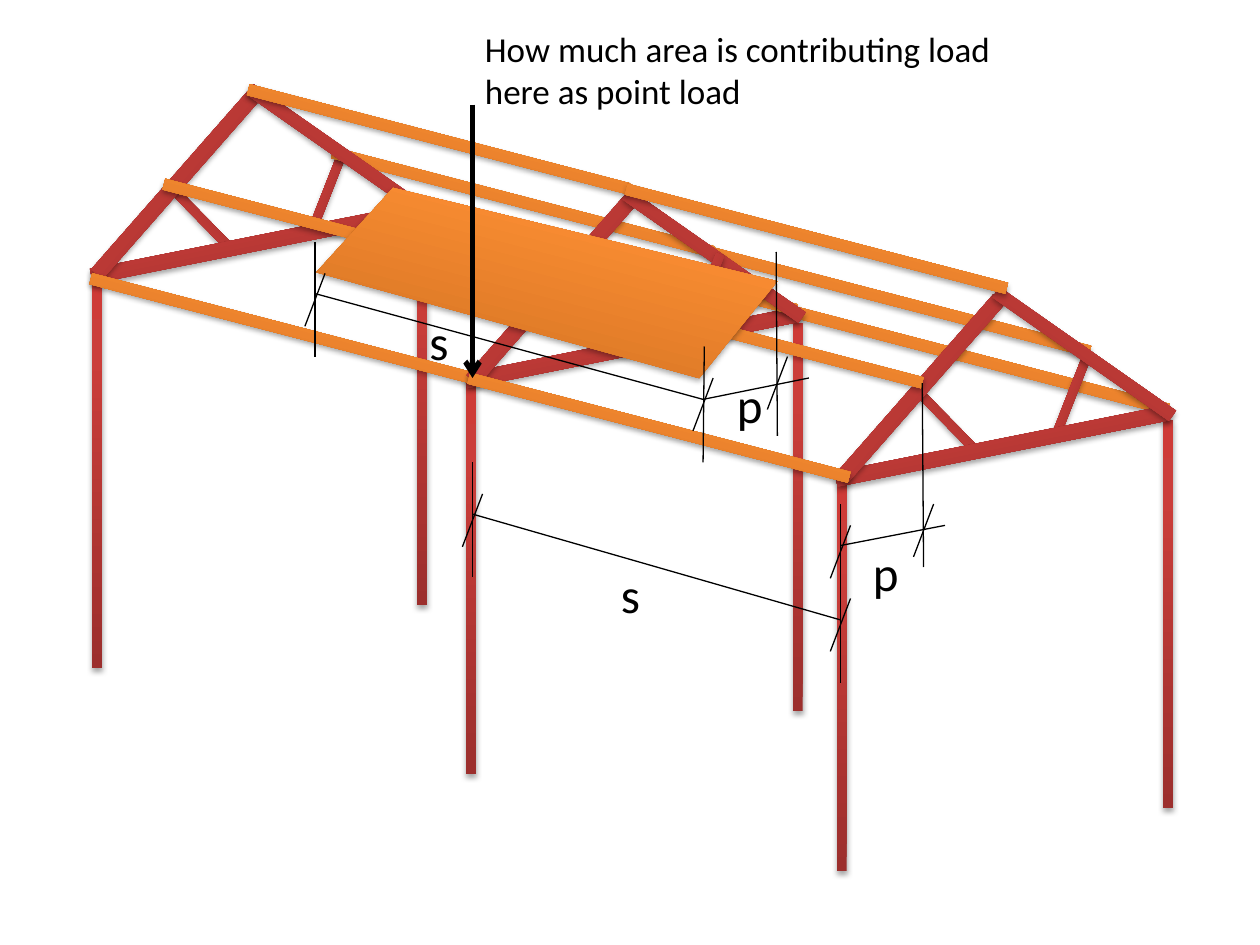
from copy import deepcopy
from math import cos, radians, sin

from pptx import Presentation
from pptx.dml.color import RGBColor
from pptx.enum.shapes import MSO_CONNECTOR as Connector, MSO_SHAPE as Preset
from pptx.enum.text import MSO_AUTO_SIZE as AutoSize
from pptx.oxml import parse_xml
from pptx.oxml.ns import nsdecls, qn
from pptx.util import Inches, Pt

COLORS = {"ink": "000000"}
GRADIENTS = {
    "steel": ((0, "9C2F2D"), (0.8, "CB3E3A"), (1, "CE3B37")),
    "timber": ((0, "CC6E20"), (0.8, "FF9034"), (1, "FF9136")),
}
SLOPE = 14.6

MEMBERS = {
    "purlin": (3.12, 0.09, SLOPE, "timber", False),
    "column": (0.08, 3.08, 0, "steel", False),
    "tie": (2.69, 0.12, 348.7, "steel", False),
    "front rafter": (1.88, 0.12, 311.3, "steel", False),
    "back rafter": (1.71, 0.1, 35, "steel", False),
    "front strut": (0.64, 0.07, 45.6, "steel", True),
    "back strut": (0.64, 0.07, 111.4, "steel", True),
}
FRAME = (
    ("purlin", 6.2, 2.81),
    ("back strut", 8.19, 3.09),
    ("front strut", 7.18, 3.29),
    ("front strut", 4.26, 2.48),
    ("front strut", 1.26, 1.68),
    ("back strut", 2.28, 1.48),
    ("purlin", 5.58, 2.35),
    ("purlin", 2.59, 1.56),
    ("column", 6.64, 3.83),
    ("column", 9.23, 3.33),
    ("tie", 6.61, 3.48),
    ("front rafter", 6.37, 3.02),
    ("back rafter", 7.75, 2.76),
    ("column", 3.7, 3.06),
    ("column", 6.29, 2.56),
    ("tie", 3.67, 2.7),
    ("column", 0.73, 2.22),
    ("column", 3.31, 1.72),
    ("tie", 0.7, 1.87),
    ("front rafter", 0.45, 1.41),
    ("purlin", 0.67, 2.56),
    ("purlin", 3.25, 2.02),
    ("front rafter", 3.43, 2.25),
    ("back rafter", 4.81, 1.98),
    ("back rafter", 1.83, 1.15),
    ("purlin", 3.67, 3.35),
    ("purlin", 1.92, 1.06),
    ("purlin", 4.92, 1.85),
    ("purlin", 1.25, 1.81),
    ("back strut", 5.28, 2.28),
    ("purlin", 4.25, 2.6),
)
PANEL = ((3.12, 1.49), (6.17, 2.23), (5.55, 3), (2.51, 2.16))
PANEL_CENTER = (4.34, 2.22)

LOWER_LINES = (
    (6.67, 4.33, 7.5, 4.17),
    (7.32, 3.04, 7.33, 4.5),
    (6.67, 4, 6.67, 4.92),
    (3.75, 4.08, 6.67, 4.92),
    (3.75, 3.67, 3.75, 4.58),
    (6.67, 4.5, 6.67, 5.42),
)
LOWER_TICKS = ((7.33, 4), (6.67, 4.17), (3.75, 3.92), (6.67, 4.75))
LOWER_LABELS = (("p", 6.83, 4.26, 0.41), ("s", 4.83, 4.43, 0.36))

UPPER_LINES = (
    (2.5, 2.33, 5.58, 3.17),
    (2.5, 1.92, 2.5, 2.83),
    (5.59, 2.75, 5.58, 3.67),
    (6.16, 2, 6.17, 3.46),
    (5.58, 3.17, 6.42, 3),
)
UPPER_TICKS = ((2.5, 2.17), (5.58, 3), (6.17, 2.83))
UPPER_LABELS = (("s", 3.31, 2.42, 0.36), ("p", 5.75, 2.92, 0.41))


class Drawing:
    font = "Calibri"

    def __init__(self, slide):
        self.slide = slide

    def finish(self, shape, gradient, rotation):
        shape.rotation = rotation
        shape.line.fill.background()
        shape.fill.gradient()
        shape.fill.gradient_angle = 90
        stop_list = shape._element.spPr.find(".//" + qn("a:gsLst"))
        stop_list.append(deepcopy(stop_list[-1]))
        for stop, (position, color) in zip(shape.fill.gradient_stops, GRADIENTS[gradient]):
            stop.position = position
            stop.color.rgb = RGBColor.from_string(color)
        for color in stop_list.iter(qn("a:srgbClr")):
            for change in list(color):
                color.remove(change)
        shape.shadow.inherit = False
        shape._element.spPr.find(qn("a:effectLst")).append(parse_xml(
            f'<a:outerShdw {nsdecls("a")} blurRad="40000" dist="23000" dir="5400000" '
            f'rotWithShape="0"><a:srgbClr val="{COLORS["ink"]}">'
            '<a:alpha val="35000"/></a:srgbClr></a:outerShdw>'))

    def member(self, kind, left, top):
        width, height, rotation, gradient, flipped = MEMBERS[kind]
        bar = self.slide.shapes.add_shape(
            Preset.RECTANGLE, Inches(left), Inches(top), Inches(width), Inches(height))
        self.finish(bar, gradient, rotation)
        if flipped:
            bar._element.spPr.find(qn("a:xfrm")).set("flipV", "1")

    def panel(self, corners, center, rotation):
        angle = radians(rotation)
        points = []
        for x, y in corners:
            across, down = x - center[0], y - center[1]
            points.append((
                Inches(center[0] + across * cos(angle) + down * sin(angle)),
                Inches(center[1] - across * sin(angle) + down * cos(angle))))
        builder = self.slide.shapes.build_freeform(*points[0])
        builder.add_line_segments(points[1:], close=True)
        self.finish(builder.convert_to_shape(), "timber", rotation)

    def line(self, *ends, weight=0.75, arrow=False):
        line = self.slide.shapes.add_connector(
            Connector.STRAIGHT, *(Inches(value) for value in ends))
        line.line.width = Pt(weight)
        line.line.color.rgb = RGBColor.from_string(COLORS["ink"])
        properties = line._element.spPr
        if arrow:
            properties.find(qn("a:ln")).append(
                parse_xml(f'<a:tailEnd {nsdecls("a")} type="arrow"/>'))
        properties.append(parse_xml(f'<a:effectLst {nsdecls("a")}/>'))

    def tick(self, x, top):
        self.line(x + 0.08, top, x - 0.08, top + 0.42)

    def text(self, lines, left, top, width, height=0.57, size=28):
        box = self.slide.shapes.add_textbox(
            Inches(left), Inches(top), Inches(width), Inches(height))
        frame = box.text_frame
        frame.word_wrap = False
        frame.auto_size = AutoSize.SHAPE_TO_FIT_TEXT
        for index, words in enumerate(lines):
            para = frame.add_paragraph() if index else frame.paragraphs[0]
            span = para.add_run()
            span.text = words
            for name, value in {"name": self.font, "size": Pt(size)}.items():
                setattr(span.font, name, value)
            span.font.color.rgb = RGBColor.from_string(COLORS["ink"])

    def dimensions(self, lines, ticks, labels):
        for ends in lines:
            self.line(*ends)
        for place in ticks:
            self.tick(*place)
        for letter, left, top, width in labels:
            self.text([letter], left, top, width)


def main():
    deck = Presentation()
    deck.slide_width, deck.slide_height = Inches(10), Inches(7.5)
    drawing = Drawing(deck.slides.add_slide(deck.slide_layouts[6]))
    for kind, left, top in FRAME:
        drawing.member(kind, left, top)
    drawing.dimensions(LOWER_LINES, LOWER_TICKS, LOWER_LABELS)
    drawing.panel(PANEL, PANEL_CENTER, SLOPE)
    drawing.dimensions(UPPER_LINES, UPPER_TICKS, UPPER_LABELS)
    drawing.line(3.75, 0.83, 3.75, 3, weight=3, arrow=True)
    drawing.text(["How much area is contributing load", "here as point load"],
                 3.75, 0.17, 4.31, 0.77, 20)
    deck.save("out.pptx")


if __name__ == "__main__":
    main()
